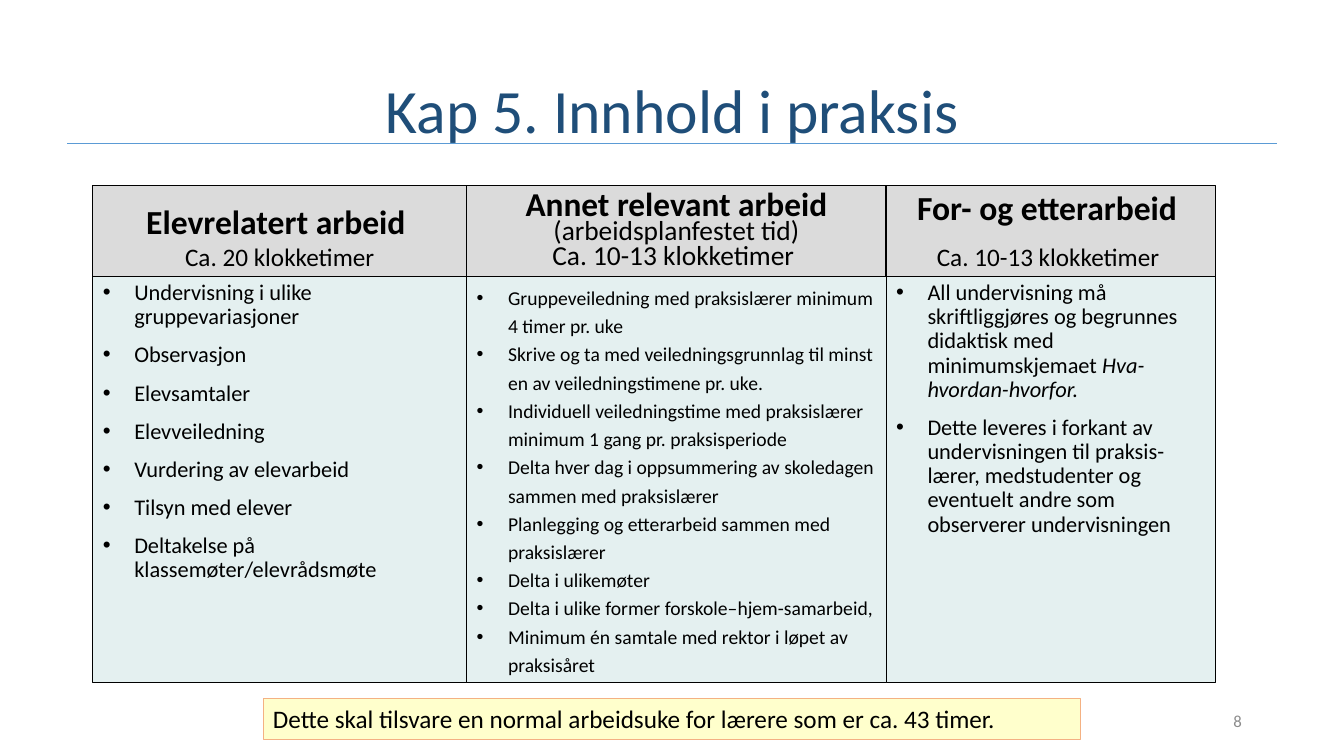
from lxml import etree
from pptx import Presentation
from pptx.dml.color import RGBColor
from pptx.enum.shapes import MSO_CONNECTOR, MSO_SHAPE
from pptx.enum.text import MSO_ANCHOR, MSO_AUTO_SIZE, PP_ALIGN
from pptx.oxml.ns import qn
from pptx.util import Cm, Pt

LEFT, CENTER, RIGHT = PP_ALIGN.LEFT, PP_ALIGN.CENTER, PP_ALIGN.RIGHT
TOP, MIDDLE, BOTTOM = MSO_ANCHOR.TOP, MSO_ANCHOR.MIDDLE, MSO_ANCHOR.BOTTOM
NO_FIT = MSO_AUTO_SIZE.NONE
RECTANGLE = MSO_SHAPE.RECTANGLE
STRAIGHT = MSO_CONNECTOR.STRAIGHT

# Content: each paragraph is a list of (text, format) runs
TITLE = "Kap 5. Innhold i praksis"
NOTE = "Dette skal tilsvare en normal arbeidsuke for lærere som er ca. 43 timer."
PAGE_NUMBER = "8"
COLUMNS = [
    {
        "width": 9.42,
        "heading": [
            [("Elevrelatert arbeid ", {"size": 24, "bold": True})],
            [("Ca. 20 klokketimer", {"size": 18})],
        ],
        "heading_spacing": [(1.0, 0), (1.0, 0)],
        "list_format": {"size": 16, "line": 0.9, "before": 10},
        "items": [
            [("Undervisning i ulike gruppevariasjoner", {})],
            [("Observasjon", {})],
            [("Elevsamtaler", {})],
            [("Elevveiledning", {})],
            [("Vurdering av elevarbeid", {})],
            [("Tilsyn med elever", {})],
            [("Deltakelse på klassemøter/elevrådsmøte", {})],
        ],
    },
    {
        "width": 10.57,
        "heading": [
            [("Annet relevant arbeid ", {"size": 23.8, "bold": True}),
             ("(arbeidsplanfestet tid)", {"size": 19.6})],
            [("Ca. 10-13 klokketimer ", {"size": 19.6})],
        ],
        "heading_spacing": [(0.7, 0), (0.8, 0)],
        "list_format": {"size": 14, "line": 1.2, "before": 0},
        "items": [
            [("Gruppeveiledning med praksislærer minimum 4 timer pr. uke", {})],
            [("Skrive og ta med veiledningsgrunnlag til minst en av "
              "veiledningstimene pr. uke.", {})],
            [("Individuell veiledningstime med praksislærer minimum 1 gang "
              "pr. praksisperiode", {})],
            [("Delta hver dag i oppsummering av skoledagen sammen med "
              "praksislærer", {})],
            [("Planlegging og etterarbeid sammen med praksislærer", {})],
            [("Delta i ulikemøter", {})],
            [("Delta i ulike former forskole–hjem-samarbeid,", {})],
            [("Minimum én samtale med rektor i løpet av praksisåret", {})],
        ],
    },
    {
        "width": 8.31,
        "heading": [
            [("For- og etterarbeid ", {"size": 24, "bold": True})],
            [("Ca. 10-13 klokketimer ", {"size": 18})],
        ],
        "heading_spacing": [(1.0, 0), (1.0, 10)],
        "list_format": {"size": 16, "line": 0.9, "before": 10},
        "items": [
            [("All undervisning må skriftliggjøres og begrunnes didaktisk med "
              "minimumskjemaet ", {}),
             ("Hva-hvordan-hvorfor.", {"italic": True})],
            [("Dette leveres i forkant av undervisningen til praksis-lærer, "
              "medstudenter og eventuelt andre som observerer undervisningen", {})],
        ],
    },
]

COLORS = {
    "title": "1F4E79", "text": "000000", "number": "8C8C8C",
    "heading": "DBDBDB", "list": "E4F0F0", "border": "000000",
    "note": "FFFFCC", "note_border": "F4B183", "rule": "5B9BD5",
}
FONT = "Calibri"
GRID_LEFT, HEADING_TOP, HEADING_HEIGHT, LIST_HEIGHT = 2.34, 4.67, 2.29, 10.24
LIST_TOP = HEADING_TOP + HEADING_HEIGHT
BULLET_INDENT = Cm(0.79)
LIST_PLACEHOLDERS = (1, 2, 4)
SPARE_PLACEHOLDER = 3


def color(name):
    return RGBColor.from_string(COLORS[name])


def place(part, left, top, width, height):
    box = {"left": left, "top": top, "width": width, "height": height}
    for side, length in box.items():
        setattr(part, side, Cm(length))


def paint(part, fill, border):
    part.fill.solid()
    part.fill.fore_color.rgb = color(fill)
    part.line.color.rgb = color(border)
    part.line.width = Pt(0.75)


def add_bullet(paragraph):
    properties = paragraph._p.get_or_add_pPr()
    properties.set("marL", str(BULLET_INDENT))
    properties.set("indent", str(-BULLET_INDENT))
    etree.SubElement(properties, qn("a:buFont")).set("typeface", "Arial")
    etree.SubElement(properties, qn("a:buChar")).set("char", "•")


def write(part, paragraphs, spacing, size=18, ink="text", align=LEFT,
          anchor=TOP, bullets=False):
    frame = part.text_frame
    frame_format = {"word_wrap": True, "auto_size": NO_FIT, "vertical_anchor": anchor}
    for name, value in frame_format.items():
        setattr(frame, name, value)
    for index, (runs, (line, before)) in enumerate(zip(paragraphs, spacing)):
        paragraph = frame.add_paragraph() if index else frame.paragraphs[0]
        paragraph_format = {"alignment": align, "line_spacing": line,
                            "space_before": Pt(before), "space_after": Pt(0)}
        for name, value in paragraph_format.items():
            setattr(paragraph, name, value)
        if bullets:
            add_bullet(paragraph)
        for text, changes in runs:
            run = paragraph.add_run()
            run.text = text
            font_format = {"name": FONT, "size": size, "bold": False,
                           "italic": False} | changes
            font_format["size"] = Pt(font_format["size"])
            for name, value in font_format.items():
                setattr(run.font, name, value)
            run.font.color.rgb = color(ink)


presentation = Presentation()
presentation.slide_width, presentation.slide_height = Cm(33.87), Cm(19.05)
slide = presentation.slides.add_slide(presentation.slide_layouts[4])
shapes = slide.shapes
placeholders = {holder.placeholder_format.idx: holder for holder in slide.placeholders}
spare = placeholders[SPARE_PLACEHOLDER].element
spare.getparent().remove(spare)

# Title and the rule below it
title = shapes.title
place(title, 2.34, 1.01, 29.21, 3.68)
write(title, [[(TITLE, {})]], [(0.9, 0)], 44, "title", CENTER, MIDDLE)
rule = shapes.add_connector(STRAIGHT, Cm(1.7), Cm(3.61), Cm(32.18), Cm(3.61))
rule.line.color.rgb = color("rule")
rule.line.width = Pt(1)
etree.SubElement(rule._element.spPr, qn("a:effectLst"))

# Three columns: heading above bulleted list
left = GRID_LEFT
for column, holder in zip(COLUMNS, LIST_PLACEHOLDERS):
    width = column["width"]
    heading = shapes.add_shape(RECTANGLE, 0, 0, 0, 0)
    heading.shadow.inherit = False
    place(heading, left, HEADING_TOP, width, HEADING_HEIGHT)
    paint(heading, "heading", "border")
    write(heading, column["heading"], column["heading_spacing"],
          align=CENTER, anchor=BOTTOM)

    duties = placeholders[holder]
    place(duties, left, LIST_TOP, width, LIST_HEIGHT)
    paint(duties, "list", "border")
    style = column["list_format"]
    spacing = [(style["line"], style["before"] if index else 0)
               for index in range(len(column["items"]))]
    write(duties, column["items"], spacing, style["size"], bullets=True)
    left += width

# Note and page number
note = shapes.add_shape(RECTANGLE, 0, 0, 0, 0)
note.shadow.inherit = False
place(note, 6.63, 17.6, 20.6, 1.03)
paint(note, "note", "note_border")
write(note, [[(NOTE, {})]], [(1.0, 0)])

page_number = shapes.add_textbox(0, 0, 0, 0)
place(page_number, 23.93, 17.65, 7.62, 1.01)
write(page_number, [[(PAGE_NUMBER, {})]], [(1.0, 0)], 12, "number", RIGHT, MIDDLE)

presentation.save("out.pptx")
